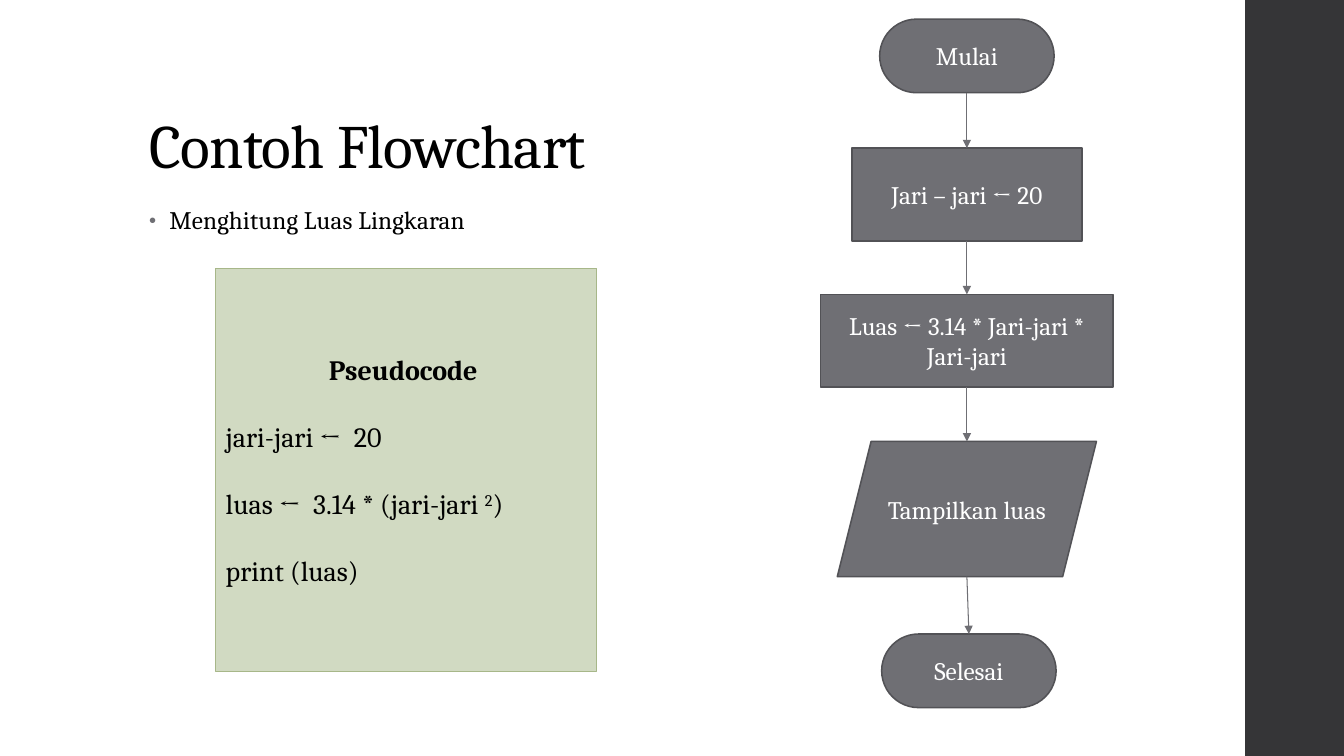
import pptx
import pptx.util
import pptx.oxml
import pptx.oxml.ns
import pptx.dml.color
import pptx.enum.shapes
import pptx.enum.text
from dataclasses import dataclass

SHAPE = pptx.enum.shapes.MSO_SHAPE
ALIGN = pptx.enum.text.PP_ALIGN
ANCHOR = pptx.enum.text.MSO_ANCHOR
Inches = pptx.util.Inches
Pt = pptx.util.Pt
DML = "http://schemas.openxmlformats.org/drawingml/2006/main"

TITLE = "Contoh Flowchart"
TOPIC = "Menghitung Luas Lingkaran"
HEAD = "Pseudocode "
CODE = [
    [("jari-jari ←  20", 0)],
    [("luas ←  3.14 * (jari-jari ", 0), ("2", 30), (")", 0)],
    [("print (luas)", 0)],
]
# text, shape, centre x, top, width, height
STEPS = [
    ("Mulai", SHAPE.ROUNDED_RECTANGLE, 9.59, 0.19, 1.73, 0.73),
    ("Jari – jari ← 20", SHAPE.RECTANGLE, 9.59, 1.47, 2.28, 0.92),
    ("Luas ← 3.14 * Jari-jari * Jari-jari", SHAPE.RECTANGLE, 9.59, 2.92, 2.9, 0.92),
    ("Tampilkan luas", SHAPE.PARALLELOGRAM, 9.59, 4.38, 2.57, 1.34),
    ("Selesai", SHAPE.ROUNDED_RECTANGLE, 9.61, 6.29, 1.73, 0.73),
]


@dataclass
class Theme:
    font: str = "Cambria"
    ink: str = "000000"
    light: str = "FFFFFF"
    band: str = "353537"
    node: str = "6F6F74"
    edge: str = "525256"
    code: str = "D1DAC2"
    rim: str = "A7B789"
    title: int = 44
    text: int = 18
    pseudo: int = 20


LOOK = Theme()


def color(code):
    return pptx.dml.color.RGBColor.from_string(code)


def write(para, runs, size=LOOK.text, ink=LOOK.ink, bold=False, align=ALIGN.LEFT,
          line=None, before=None, after=None, track=0):
    """Fill a paragraph with a string or with (text, percent raised) pairs."""
    para.alignment = align
    para.line_spacing = line
    para.space_before = before
    para.space_after = after
    for text, rise in [(runs, 0)] if isinstance(runs, str) else runs:
        run = para.add_run()
        run.text = text
        font = run.font
        font.name, font.size, font.bold = LOOK.font, Pt(size), bold
        font.color.rgb = color(ink)
        props = run._r.get_or_add_rPr()
        if rise:
            props.set("baseline", str(rise * 1000))
        if track:
            props.set("spc", str(int(track * 100)))


def bullet(para, mark, tint, scale, indent):
    props = para._p.get_or_add_pPr()
    props.set("marL", str(Inches(indent)))
    props.set("indent", str(-Inches(indent)))
    for part in (f'<a:buClr xmlns:a="{DML}"><a:srgbClr val="{tint}"/></a:buClr>',
                 f'<a:buSzPct xmlns:a="{DML}" val="{scale * 1000}"/>',
                 f'<a:buFont xmlns:a="{DML}" typeface="Arial"/>',
                 f'<a:buChar xmlns:a="{DML}" char="{mark}"/>'):
        props.append(pptx.oxml.parse_xml(part))


def place(holder, left, top, width, height, anchor):
    holder.left, holder.top = Inches(left), Inches(top)
    holder.width, holder.height = Inches(width), Inches(height)
    frame = holder.text_frame
    frame.auto_size = pptx.enum.text.MSO_AUTO_SIZE.NONE
    frame.vertical_anchor = anchor
    return frame.paragraphs[0]


def block(slide, kind, left, top, width, height, fill, line=None, weight=0.75):
    shape = slide.shapes.add_shape(
        kind, Inches(left), Inches(top), Inches(width), Inches(height))
    shape.shadow.inherit = False
    shape.fill.solid()
    shape.fill.fore_color.rgb = color(fill)
    if line:
        shape.line.color.rgb = color(line)
        shape.line.width = Pt(weight)
    else:
        shape.line.fill.background()
    if kind == SHAPE.ROUNDED_RECTANGLE:
        shape.adjustments[0] = 0.5
    shape.text_frame.word_wrap = True
    shape.text_frame.vertical_anchor = ANCHOR.MIDDLE
    return shape.text_frame


def arrow(slide, start, end):
    link = slide.shapes.add_connector(
        pptx.enum.shapes.MSO_CONNECTOR.STRAIGHT,
        *(Inches(n) for n in (*start, *end)))
    link.line.color.rgb = color(LOOK.node)
    link.line.width = Pt(0.75)
    link.line._get_or_add_ln().append(
        pptx.oxml.parse_xml(f'<a:tailEnd xmlns:a="{DML}" type="triangle"/>'))
    link._element.spPr.append(
        pptx.oxml.parse_xml(f'<a:effectLst xmlns:a="{DML}"/>'))


def main():
    deck = pptx.Presentation()
    deck.slide_width, deck.slide_height = Inches(13.33), Inches(7.5)
    slide = deck.slides.add_slide(deck.slide_layouts[1])
    block(slide, SHAPE.RECTANGLE, 12.35, 0, 0.98, 7.5, LOOK.band)

    para = place(slide.shapes.title, 1.38, 0.4, 10.6, 1.45, ANCHOR.BOTTOM)
    write(para, TITLE, size=LOOK.title, line=0.9, track=-0.5)
    para = place(slide.placeholders[1], 1.38, 2, 9.4, 4.76, ANCHOR.TOP)
    write(para, TOPIC, line=0.95, before=Pt(14), after=Pt(2), track=0.1)
    bullet(para, "•", LOOK.node, 80, 0.2)

    for text, kind, mid, top, width, height in STEPS:
        frame = block(slide, kind, mid - width / 2, top, width, height,
                      LOOK.node, LOOK.edge, 1.1)
        write(frame.paragraphs[0], text, ink=LOOK.light, align=ALIGN.CENTER)
    for step, after in zip(STEPS, STEPS[1:]):
        arrow(slide, (step[2], step[3] + step[5]), (after[2], after[3]))

    frame = block(slide, SHAPE.RECTANGLE, 2.14, 2.66, 3.78, 4, LOOK.code, LOOK.rim)
    write(frame.paragraphs[0], HEAD, size=LOOK.pseudo, bold=True, align=ALIGN.CENTER)
    for runs in CODE:
        write(frame.add_paragraph(), runs, size=LOOK.pseudo, before=Pt(24))

    deck.save("out.pptx")


if __name__ == "__main__":
    main()
